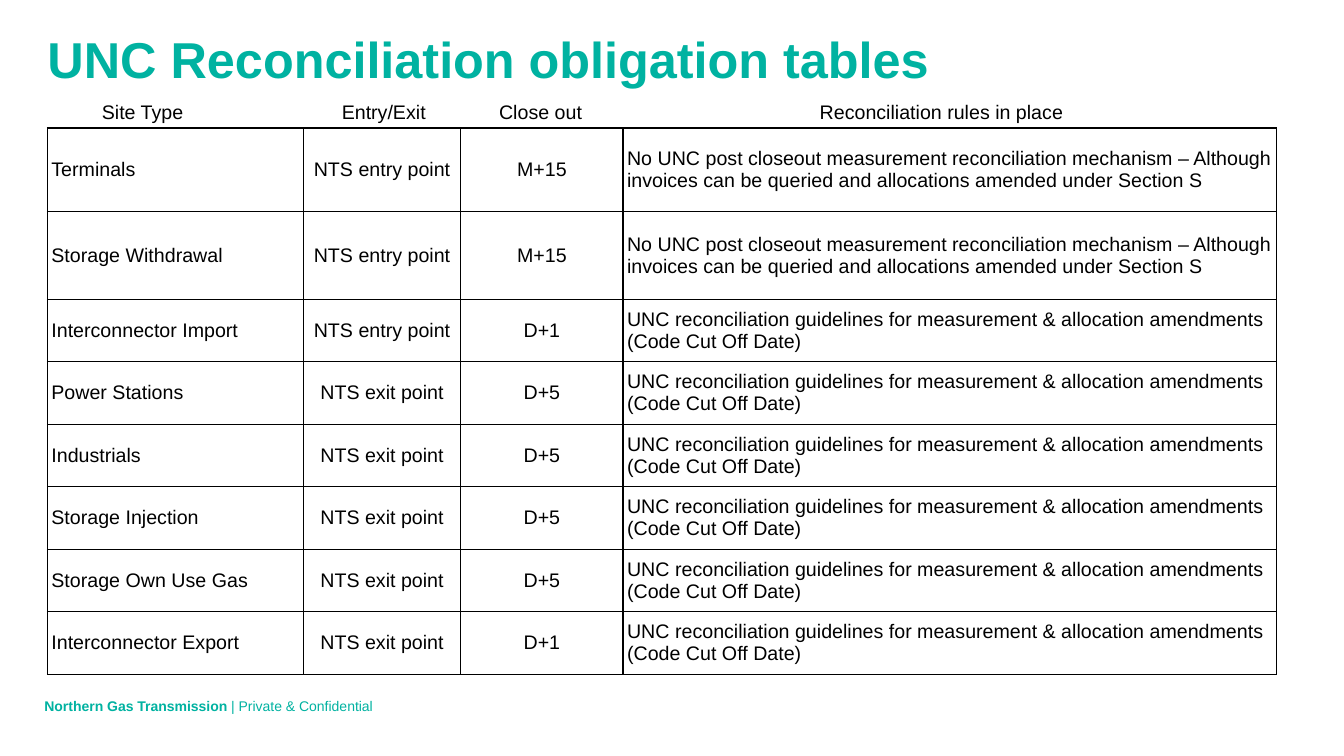
from lxml.etree import SubElement
from pptx import Presentation
from pptx.dml.color import RGBColor
from pptx.enum.text import MSO_ANCHOR, PP_ALIGN
from pptx.oxml.ns import qn
from pptx.util import Inches, Pt

COLORS = {"teal": "00B2A1", "black": "000000"}
FONT = "Arial"
TITLE = "UNC Reconciliation obligation tables"
FOOTER = [("Northern Gas Transmission ", True), ("| Private & Confidential", False)]

QUERY_RULE = (
    "No UNC post closeout measurement reconciliation mechanism – Although "
    "invoices can be queried and allocations amended under Section S"
)
CUT_OFF_RULE = (
    "UNC reconciliation guidelines for measurement & allocation amendments "
    "(Code Cut Off Date)"
)
ENTRY, EXIT = "NTS entry point", "NTS exit point"
HEADERS = ["Site Type", "Entry/Exit", "Close out", "Reconciliation rules in place"]
SITES = [
    ("Terminals", ENTRY, "M+15", QUERY_RULE),
    ("Storage Withdrawal", ENTRY, "M+15", QUERY_RULE),
    ("Interconnector Import", ENTRY, "D+1", CUT_OFF_RULE),
    ("Power Stations", EXIT, "D+5", CUT_OFF_RULE),
    ("Industrials", EXIT, "D+5", CUT_OFF_RULE),
    ("Storage Injection", EXIT, "D+5", CUT_OFF_RULE),
    ("Storage Own Use Gas", EXIT, "D+5", CUT_OFF_RULE),
    ("Interconnector Export", EXIT, "D+1", CUT_OFF_RULE),
]
COLUMN_WIDTHS = [2.54, 1.56, 1.61, 6.48]
ROW_HEIGHTS = [0.3, 0.83, 0.87] + [0.62] * 6
HEADER_INDENTS = [0.54, 0.38, 0.38, 1.95]
COLUMN_ALIGNMENTS = [PP_ALIGN.LEFT, PP_ALIGN.CENTER, PP_ALIGN.CENTER, PP_ALIGN.LEFT]
EDGES = ("L", "R", "T", "B")


def write_text(paragraph, text, size=14, color="black", bold=False, align=PP_ALIGN.LEFT):
    paragraph.alignment = align
    run = paragraph.add_run()
    run.text = text
    run.font.name = FONT
    run.font.size = Pt(size)
    run.font.bold = bold
    run.font.color.rgb = RGBColor.from_string(COLORS[color])


def add_text_box(slide, left, top, width, height, anchor):
    box = slide.shapes.add_textbox(*map(Inches, (left, top, width, height)))
    frame = box.text_frame
    frame.word_wrap = True
    frame.vertical_anchor = anchor
    frame.margin_left = frame.margin_right = frame.margin_top = frame.margin_bottom = 0
    return frame.paragraphs[0]


def set_borders(cell, visible):
    properties = cell._tc.get_or_add_tcPr()
    for edge in EDGES:
        line = SubElement(properties, qn(f"a:ln{edge}"), w=str(Pt(1)))
        if edge in visible:
            fill = SubElement(line, qn("a:solidFill"))
            SubElement(fill, qn("a:srgbClr"), val=COLORS["black"])
        else:
            SubElement(line, qn("a:noFill"))


def set_margins(cell, left, top, right, bottom):
    cell.margin_left, cell.margin_top = Inches(left), Inches(top)
    cell.margin_right, cell.margin_bottom = Inches(right), Inches(bottom)


def add_obligation_table(slide, left, top):
    frame = slide.shapes.add_table(
        len(ROW_HEIGHTS), len(COLUMN_WIDTHS), Inches(left), Inches(top),
        Inches(sum(COLUMN_WIDTHS)), Inches(sum(ROW_HEIGHTS)),
    )
    table = frame.table
    table.horz_banding = False
    for column, width in zip(table.columns, COLUMN_WIDTHS):
        column.width = Inches(width)
    for row, height in zip(table.rows, ROW_HEIGHTS):
        row.height = Inches(height)
    for row_index, texts in enumerate([HEADERS, *SITES]):
        is_header = row_index == 0
        for column_index, text in enumerate(texts):
            cell = table.cell(row_index, column_index)
            set_borders(cell, "B" if is_header else EDGES)
            cell.fill.background()
            if is_header:
                set_margins(cell, HEADER_INDENTS[column_index], 0.01, 0.01, 0.04)
                cell.vertical_anchor = MSO_ANCHOR.BOTTOM
                align = PP_ALIGN.LEFT
            else:
                set_margins(cell, 0.04, 0.04, 0.04, 0.04)
                cell.vertical_anchor = MSO_ANCHOR.MIDDLE
                align = COLUMN_ALIGNMENTS[column_index]
            write_text(cell.text_frame.paragraphs[0], text, align=align)


def main():
    presentation = Presentation()
    presentation.slide_width, presentation.slide_height = Inches(13.33), Inches(7.5)
    slide = presentation.slides.add_slide(presentation.slide_layouts[6])

    footer = add_text_box(slide, 0.44, 6.88, 4.05, 0.24, MSO_ANCHOR.MIDDLE)
    for text, bold in FOOTER:
        write_text(footer, text, size=10, color="teal", bold=bold)

    title = add_text_box(slide, 0.47, 0.35, 12.39, 0.63, MSO_ANCHOR.TOP)
    title.line_spacing = 0.9
    write_text(title, TITLE, size=36, color="teal", bold=True)

    add_obligation_table(slide, 0.47, 0.97)
    presentation.save("out.pptx")


if __name__ == "__main__":
    main()
